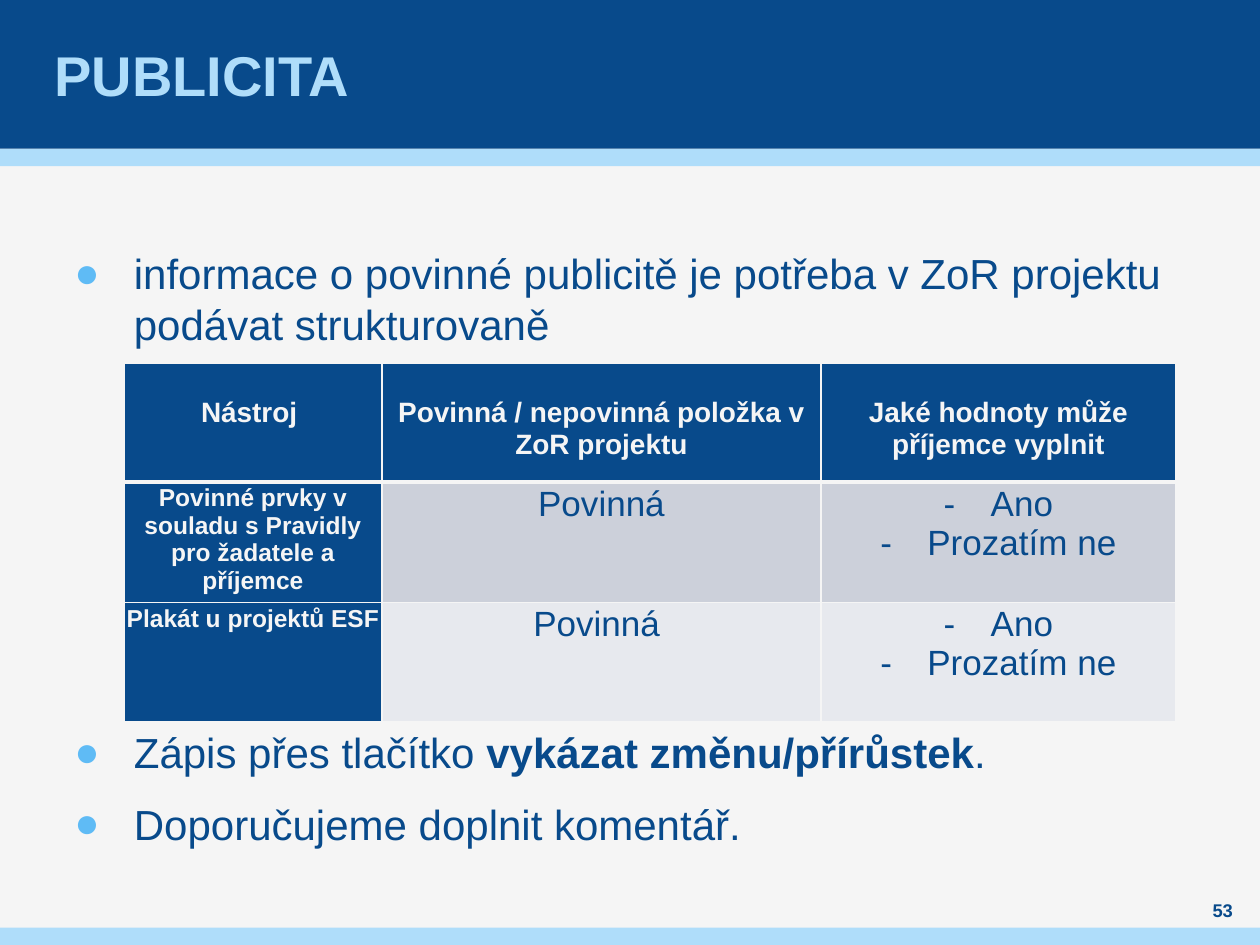
from lxml import etree
from pptx import Presentation
from pptx import util as u
from pptx.dml.color import RGBColor
from pptx.enum import shapes, text
from pptx.oxml.ns import qn

COLORS = {
    "navy": "084A8B",
    "sky": "AFDDFA",
    "bullet": "5FBBF5",
    "paper": "F5F5F5",
    "row_dark": "CCD0DA",
    "row_light": "E7E9EE",
}
MARGINS = ("margin_left", "margin_top", "margin_right", "margin_bottom")
CENTER = text.PP_ALIGN.CENTER


def color(name):
    return RGBColor.from_string(COLORS[name])


def set_all(target, values):
    for name, value in values.items():
        setattr(target, name, value)


def fill_solid(target, name):
    target.fill.solid()
    target.fill.fore_color.rgb = color(name)


def add_run(paragraph, words, size, ink, bold=False):
    run = paragraph.add_run()
    run.text = words
    set_all(run.font, {"name": "Arial", "size": u.Pt(size), "bold": bold})
    run.font.color.rgb = color(ink)


def set_bullet(paragraph, char, indent, ink=None):
    properties = paragraph._p.get_or_add_pPr()
    properties.set("marL", str(indent))
    properties.set("indent", str(-indent))
    if ink:
        bullet_color = etree.SubElement(properties, qn("a:buClr"))
        etree.SubElement(bullet_color, qn("a:srgbClr"), val=COLORS[ink])
    etree.SubElement(properties, qn("a:buFont"), typeface="Arial")
    etree.SubElement(properties, qn("a:buChar"), char=char)


def add_bar(slide, top, height, ink):
    bar = slide.shapes.add_shape(
        shapes.MSO_SHAPE.RECTANGLE, 0, u.Cm(top), u.Cm(25.4), u.Cm(height))
    bar.shadow.inherit = False
    fill_solid(bar, ink)
    bar.line.fill.background()


def add_title(slide, words):
    title = slide.shapes.title
    # Bring the title in front of the header band
    slide.shapes._spTree.append(title._element)
    set_all(title, {"left": u.Cm(1), "top": 0, "width": u.Cm(23.4), "height": u.Cm(3)})
    frame = title.text_frame
    set_all(frame, dict(zip(MARGINS, (u.Cm(0.1), 0, u.Cm(0.1), 0))))
    frame.vertical_anchor = text.MSO_ANCHOR.MIDDLE
    paragraph = frame.paragraphs[0]
    paragraph.alignment = text.PP_ALIGN.LEFT
    add_run(paragraph, words, 32, "sky", True)


def add_text_frame(slide, left, top, width, height):
    box = slide.shapes.add_textbox(u.Cm(left), u.Cm(top), u.Cm(width), u.Cm(height))
    frame = box.text_frame
    set_all(frame, dict.fromkeys(MARGINS, 0) | {"word_wrap": True})
    return frame


def add_bullets(slide, items):
    """Each item is the space before it and its (words, bold) runs."""
    frame = add_text_frame(slide, 1.5, 5, 22.4, 12)
    for index, (space, runs) in enumerate(items):
        paragraph = frame.add_paragraph() if index else frame.paragraphs[0]
        set_all(paragraph, {
            "line_spacing": u.Pt(28.8),
            "space_before": u.Pt(space),
            "space_after": u.Pt(6),
        })
        set_bullet(paragraph, "●", u.Cm(1.2), "bullet")
        for words, bold in runs:
            add_run(paragraph, words, 24, "navy", bold)


def set_borders(cell, top, bottom):
    properties = cell._tc.get_or_add_tcPr()
    for side, width in (("L", 1), ("R", 1), ("T", top), ("B", bottom)):
        line = etree.SubElement(properties, qn(f"a:ln{side}"), w=str(u.Pt(width)))
        line_fill = etree.SubElement(line, qn("a:solidFill"))
        etree.SubElement(line_fill, qn("a:srgbClr"), val=COLORS["paper"])


def fill_cell(cell, lines, row, column, fill):
    is_header = row == 0
    is_label = is_header or column == 0
    set_borders(cell, 3 if row == 1 else 1, 3 if is_header else 1)
    fill_solid(cell, "navy" if is_label else fill)
    side = u.Cm(0.05)
    top = u.Cm(0.7) if is_header else side
    set_all(cell, dict(zip(MARGINS, (side, top, side, 0))))
    size = 16 if is_header else 14 if is_label else 20
    for index, words in enumerate(lines):
        paragraph = cell.text_frame.add_paragraph() if index else cell.text_frame.paragraphs[0]
        paragraph.alignment = CENTER
        if len(lines) > 1:
            set_bullet(paragraph, "-", u.Cm(0.95))
        add_run(paragraph, words, size, "paper" if is_label else "navy", is_label)


def add_grid(slide, rows, widths, row_height):
    table = slide.shapes.add_table(
        len(rows), len(widths), u.Cm(2.5), u.Cm(7.32),
        u.Cm(sum(widths)), u.Cm(row_height * len(rows))).table
    for column, width in zip(table.columns, widths):
        column.width = u.Cm(width)
    for row, cells in enumerate(rows):
        table.rows[row].height = u.Cm(row_height)
        fill = "row_dark" if row % 2 else "row_light"
        for column, lines in enumerate(cells):
            fill_cell(table.cell(row, column), lines, row, column, fill)


def add_page_number(slide, number):
    frame = add_text_frame(slide, 24, 18.1, 1.3, 0.5)
    frame.vertical_anchor = text.MSO_ANCHOR.MIDDLE
    frame.paragraphs[0].alignment = CENTER
    add_run(frame.paragraphs[0], number, 10.5, "navy", True)


def main():
    presentation = Presentation()
    set_all(presentation, {"slide_width": u.Cm(25.4), "slide_height": u.Cm(19.05)})
    slide = presentation.slides.add_slide(presentation.slide_layouts[5])
    fill_solid(slide.background, "paper")

    # Header and footer bands
    add_bar(slide, 3, 0.35, "sky")
    add_bar(slide, 0, 3, "navy")
    add_bar(slide, 18.7, 0.35, "sky")
    add_title(slide, "PUBLICITA")

    # Bullets, with room for the table after the first
    add_bullets(slide, [
        (6, [("informace o povinné publicitě je potřeba v ZoR projektu "
              "podávat strukturovaně", False)]),
        (210, [("Zápis přes tlačítko ", False),
               ("vykázat změnu/přírůstek", True), (".", False)]),
        (6, [("Doporučujeme doplnit komentář.", False)]),
    ])
    add_page_number(slide, "53")

    # Publicity tools table
    answers = ["Ano", "Prozatím ne"]
    add_grid(slide, [
        [["Nástroj "], ["Povinná / nepovinná položka v ZoR projektu"],
         ["Jaké hodnoty může příjemce vyplnit"]],
        [["Povinné prvky v souladu s Pravidly pro žadatele a příjemce"],
         ["Povinná"], answers],
        [["Plakát u projektů ESF"], ["Povinná "], answers],
    ], widths=(5.2, 8.85, 7.15), row_height=2.4)

    presentation.save("out.pptx")


if __name__ == "__main__":
    main()
